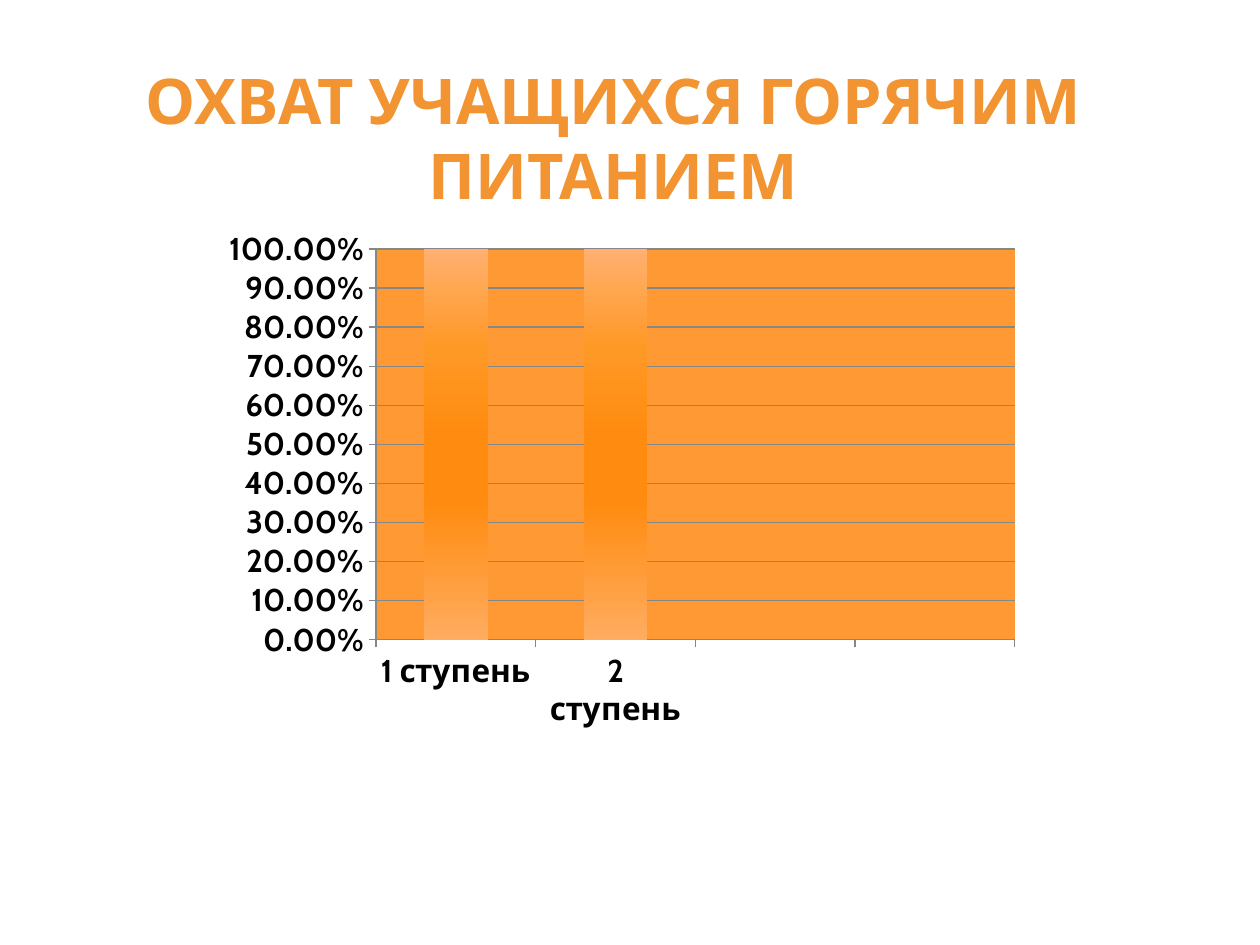
from dataclasses import dataclass

from pptx import Presentation
from pptx.chart.data import CategoryChartData
from pptx.dml.color import RGBColor
from pptx.enum.chart import XL_CHART_TYPE as ChartType, XL_TICK_MARK as TickMark
from pptx.enum.text import MSO_ANCHOR as Anchor, MSO_AUTO_SIZE as AutoSize, PP_ALIGN as Align
from pptx.oxml import parse_xml
from pptx.oxml.ns import nsdecls, qn
from pptx.util import Pt
from lxml.etree import SubElement

PX = 914400 // 126
TITLE_ORANGE = RGBColor(0xF1, 0x94, 0x31)
PLOT_ORANGE = RGBColor(0xFF, 0x99, 0x33)
GRID_GRAY = RGBColor(0x87, 0x87, 0x87)
BLACK = RGBColor(0, 0, 0)
BAR_GRADIENT = (
    (0, RGBColor(0xFF, 0xB0, 0x70)),
    (25, RGBColor(0xFF, 0x99, 0x26)),
    (48, RGBColor(0xFF, 0x8C, 0x10)),
    (65, RGBColor(0xFF, 0x8C, 0x10)),
    (100, RGBColor(0xFF, 0xAC, 0x60)),
)


@dataclass
class SlideBuilder:
    slide: object
    font: str = "Cabin"
    title_size: int = 36
    axis_size: int = 18

    def title(self, text, *box):
        heading = self.slide.shapes.title
        heading.left, heading.top, heading.width, heading.height = (n * PX for n in box)
        frame = heading.text_frame
        frame.word_wrap = True
        frame.auto_size = AutoSize.NONE
        frame.vertical_anchor = Anchor.TOP
        paragraph = frame.paragraphs[0]
        paragraph.alignment = Align.CENTER
        run = paragraph.add_run()
        run.text = text
        run.font.name = self.font
        run.font.size = Pt(self.title_size)
        run.font.bold = True
        run.font.color.rgb = TITLE_ORANGE

    def columns(self, categories, values, *box, plot):
        data = CategoryChartData(number_format="0.00%")
        data.categories = categories
        data.add_series("Series 1", values)
        frame = self.slide.shapes.add_chart(
            ChartType.COLUMN_CLUSTERED, *(n * PX for n in box), data)
        chart = frame.chart
        chart.has_legend = False
        chart.has_title = False
        chart.font.name = self.font
        chart.font.size = Pt(self.axis_size)
        chart.font.bold = True
        chart.font.color.rgb = BLACK
        bars = chart.plots[0]
        bars.gap_width = 150
        bars.vary_by_categories = False
        self.gradient(bars.series[0])
        for axis in (chart.category_axis, chart.value_axis):
            self.axis(axis)
        scale = chart.value_axis
        scale.minimum_scale, scale.maximum_scale, scale.major_unit = 0, 1, 0.1
        scale.tick_labels.number_format = "0.00%"
        scale.tick_labels.number_format_is_linked = False
        scale.has_major_gridlines = True
        self.line(scale.major_gridlines.format.line)
        self.plot_area(chart, box, plot)

    def axis(self, axis):
        axis.major_tick_mark = TickMark.OUTSIDE
        axis.minor_tick_mark = TickMark.NONE
        self.line(axis.format.line)

    def line(self, line):
        line.color.rgb = GRID_GRAY
        line.width = Pt(0.75)

    def gradient(self, series):
        fill = series.format.fill
        fill.gradient()
        fill.gradient_angle = 270
        stops = series._element.find(".//" + qn("a:gsLst"))
        for stop in list(stops):
            stops.remove(stop)
        for percent, color in BAR_GRADIENT:
            stop = SubElement(stops, qn("a:gs"), pos=str(percent * 1000))
            SubElement(stop, qn("a:srgbClr"), val=str(color))

    def plot_area(self, chart, box, plot):
        area = chart._chartSpace.chart.plotArea
        left, top, width, height = box
        x, y, w, h = plot
        parts = {"x": (x - left) / width, "y": (y - top) / height,
                 "w": w / width, "h": h / height}
        for old in area.findall(qn("c:layout")):
            area.remove(old)
        layout = parse_xml(
            f'<c:layout {nsdecls("c")}><c:manualLayout><c:layoutTarget val="inner"/>'
            '<c:xMode val="edge"/><c:yMode val="edge"/></c:manualLayout></c:layout>')
        for name, share in parts.items():
            SubElement(layout[0], qn(f"c:{name}"), val=f"{share:.4f}")
        area.insert(0, layout)
        area.append(parse_xml(
            f'<c:spPr {nsdecls("c", "a")}><a:solidFill><a:srgbClr val="{PLOT_ORANGE}"/>'
            '</a:solidFill><a:ln><a:noFill/></a:ln></c:spPr>'))


def main():
    deck = Presentation()
    deck.slide_width, deck.slide_height = 1260 * PX, 945 * PX
    builder = SlideBuilder(deck.slides.add_slide(deck.slide_layouts[5]))
    builder.columns(("1 ступень", "2 ступень", "", ""), (1, 1, None, None),
                    213, 195, 819, 541, plot=(376, 249, 639, 391))
    builder.title("ОХВАТ УЧАЩИХСЯ ГОРЯЧИМ ПИТАНИЕМ", 44, 55, 1139, 162)
    deck.save("out.pptx")


if __name__ == "__main__":
    main()
